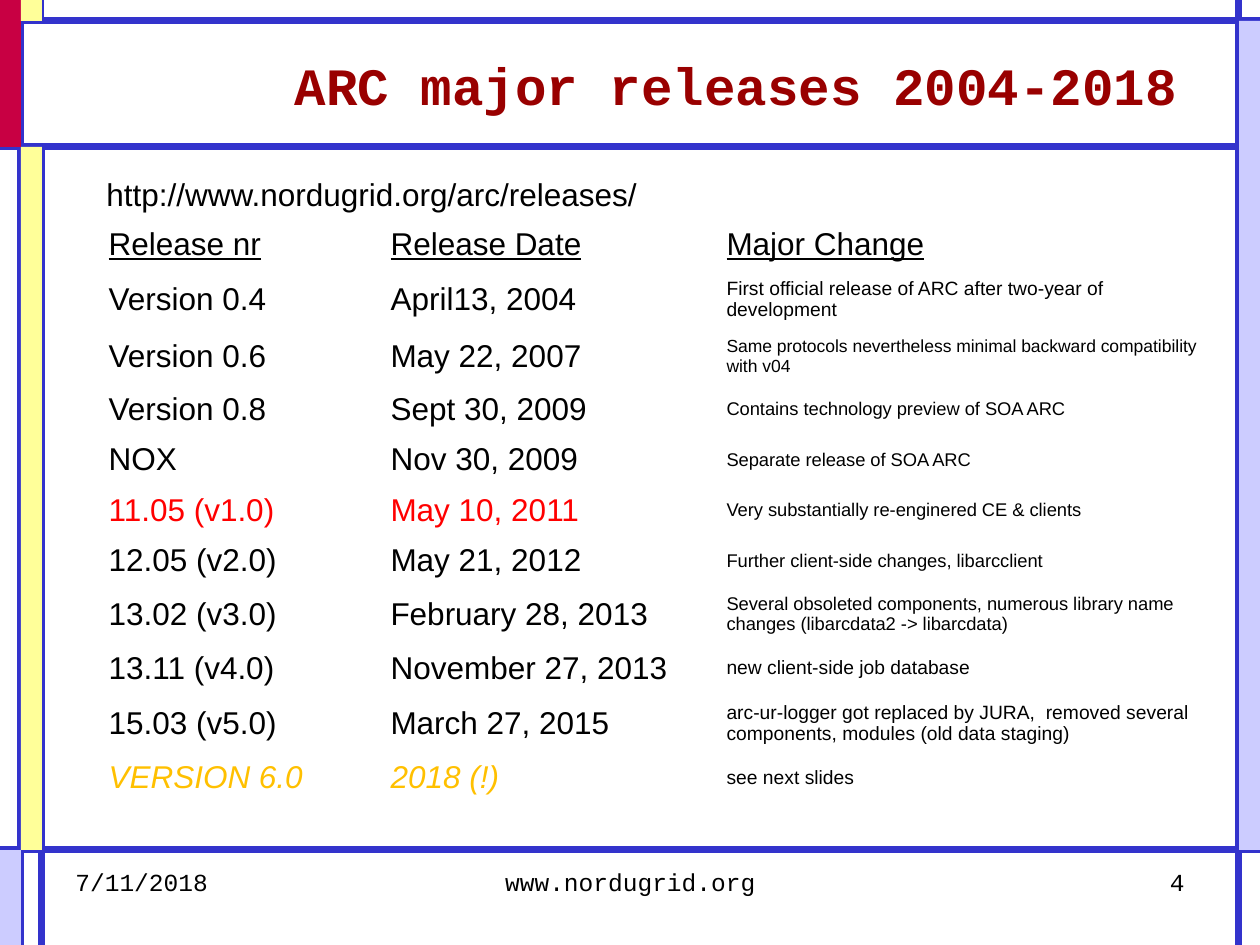
from dataclasses import dataclass

import lxml.etree
import pptx
import pptx.dml.color
import pptx.enum.shapes
import pptx.enum.text
import pptx.oxml.ns
import pptx.util

SCALE = 914400 / 126
WIDE, HIGH = 1260, 945
SANS, MONO = "Arial", "Courier New"
ALIGN = pptx.enum.text.PP_ALIGN
ANCHOR = pptx.enum.text.MSO_ANCHOR
COLORS = {
    "blue": "3333CC",
    "pale": "CCCCFF",
    "red": "C80043",
    "yellow": "FFFF99",
    "title": "990000",
    "black": "000000",
    "bright": "FF0000",
    "gold": "FFC000",
}


@dataclass
class Rule:
    x1: int
    y1: int
    x2: int
    y2: int
    weight: float = 4


@dataclass
class Block:
    x: int
    y: int
    w: int
    h: int
    color: str


@dataclass
class Label:
    x: int
    y: int
    w: int
    h: int
    text: str
    size: int = 14
    face: str = MONO
    align: ALIGN = ALIGN.LEFT
    color: str = "black"
    bold: bool = False
    anchor: ANCHOR = ANCHOR.TOP
    wrap: bool = True


@dataclass
class Release:
    name: str
    date: str
    note: str
    size: float
    height: int
    color: str = "black"
    slant: bool = False
    under: bool = False


RULES = [
    Rule(0, 147, WIDE, 147),
    Rule(0, 21, WIDE, 21),
    Rule(21, 0, 21, HIGH),
    Rule(0, 850, WIDE, 850),
    Rule(1239, 0, 1239, HIGH),
    Rule(42, 0, 42, 21, 2.25),
    Rule(42, 147, 42, HIGH),
]
BLOCKS = [
    Block(1239, 21, 21, 829, "pale"),
    Block(0, 0, 21, 147, "red"),
    Block(0, 850, 21, 95, "pale"),
    Block(21, 0, 21, 21, "yellow"),
    Block(21, 147, 21, 703, "yellow"),
]
LABELS = [
    Label(273, 53, 926, 63, "ARC major releases 2004-2018", 30,
          align=ALIGN.CENTER, color="title", bold=True, anchor=ANCHOR.MIDDLE),
    Label(63, 861, 294, 65, "7/11/2018"),
    Label(94, 169, 561, 50, "http://www.nordugrid.org/arc/releases/", 18,
          SANS, wrap=False),
    Label(431, 861, 399, 65, "www.nordugrid.org", align=ALIGN.CENTER),
    Label(903, 861, 294, 65, "4", align=ALIGN.RIGHT),
]
COLUMNS = [282, 336, 504]
RELEASES = [
    Release("Release nr", "Release Date", "Major Change", 18, 51, under=True),
    Release("Version 0.4", "April13, 2004",
            "First official release of ARC after two-year of development", 11, 58),
    Release("Version 0.6", "May 22, 2007",
            "Same protocols nevertheless minimal backward compatibility with v04", 10, 53),
    Release("Version 0.8", "Sept 30, 2009",
            "Contains technology preview of SOA ARC", 10.5, 51),
    Release("NOX", "Nov 30, 2009", "Separate release of SOA ARC", 10.5, 50),
    Release("11.05 (v1.0)", "May 10, 2011",
            "Very substantially re-enginered CE & clients", 10.5, 50, "bright"),
    Release("12.05 (v2.0)", "May 21, 2012",
            "Further client-side changes, libarcclient", 10.5, 50),
    Release("13.02 (v3.0)", "February 28, 2013",
            "Several obsoleted components, numerous library name changes "
            "(libarcdata2 -> libarcdata)", 10.5, 56),
    Release("13.11 (v4.0)", "November 27, 2013", "new client-side job database", 11, 51),
    Release("15.03 (v5.0)", "March 27, 2015",
            "arc-ur-logger got replaced by JURA,  removed several components, "
            "modules (old data staging)", 11, 58),
    Release("VERSION 6.0", "2018 (!)", "see next slides", 11, 51, "gold", True),
]


def px(*sides: int) -> list[pptx.util.Emu]:
    return [pptx.util.Emu(round(side * SCALE)) for side in sides]


def paint(name: str) -> pptx.dml.color.RGBColor:
    return pptx.dml.color.RGBColor.from_string(COLORS[name])


def style(font, face: str, size: float, color: str) -> None:
    font.name = face
    font.size = pptx.util.Pt(size)
    font.color.rgb = paint(color)


def draw_rule(shapes, rule: Rule) -> None:
    line = shapes.add_connector(pptx.enum.shapes.MSO_CONNECTOR.STRAIGHT,
                                *px(rule.x1, rule.y1, rule.x2, rule.y2))
    line.line.color.rgb = paint("blue")
    line.line.width = pptx.util.Pt(rule.weight)
    props = line._element.spPr
    lxml.etree.SubElement(props, pptx.oxml.ns.qn("a:effectLst"))


def draw_block(shapes, block: Block) -> None:
    shape = shapes.add_shape(pptx.enum.shapes.MSO_SHAPE.RECTANGLE,
                             *px(block.x, block.y, block.w, block.h))
    shape.shadow.inherit = False
    shape.fill.solid()
    shape.fill.fore_color.rgb = paint(block.color)
    shape.line.fill.background()


def draw_label(shapes, label: Label) -> None:
    frame = shapes.add_textbox(*px(label.x, label.y, label.w, label.h)).text_frame
    frame.word_wrap = label.wrap
    frame.vertical_anchor = label.anchor
    line = frame.paragraphs[0]
    line.text = label.text
    line.alignment = label.align
    style(line.font, label.face, label.size, label.color)
    line.font.bold = label.bold


def fill_cell(cell, text: str, size: float, color: str, slant: bool, under: bool) -> None:
    cell.fill.background()
    cell.vertical_anchor = ANCHOR.MIDDLE
    line = cell.text_frame.paragraphs[0]
    line.text = text
    style(line.font, SANS, size, color)
    line.font.italic = slant
    line.font.underline = under


def draw_table(shapes, x: int, y: int) -> None:
    height = sum(item.height for item in RELEASES)
    table = shapes.add_table(len(RELEASES), len(COLUMNS),
                             *px(x, y, sum(COLUMNS), height)).table
    table.first_row = table.horz_banding = False
    for column, width in zip(table.columns, COLUMNS):
        column.width = px(width)[0]
    for row, item in zip(table.rows, RELEASES):
        row.height = px(item.height)[0]
        name, date, note = row.cells
        for cell, text in ((name, item.name), (date, item.date)):
            fill_cell(cell, text, 18, item.color, item.slant, item.under)
        fill_cell(note, item.note, item.size, "black", False, item.under)


def main() -> None:
    deck = pptx.Presentation()
    deck.slide_width, deck.slide_height = px(WIDE, HIGH)
    shapes = deck.slides.add_slide(deck.slide_layouts[6]).shapes
    for rule in RULES:
        draw_rule(shapes, rule)
    for block in BLOCKS:
        draw_block(shapes, block)
    for label in LABELS:
        draw_label(shapes, label)
    draw_table(shapes, 96, 219)
    deck.save("out.pptx")


if __name__ == "__main__":
    main()
